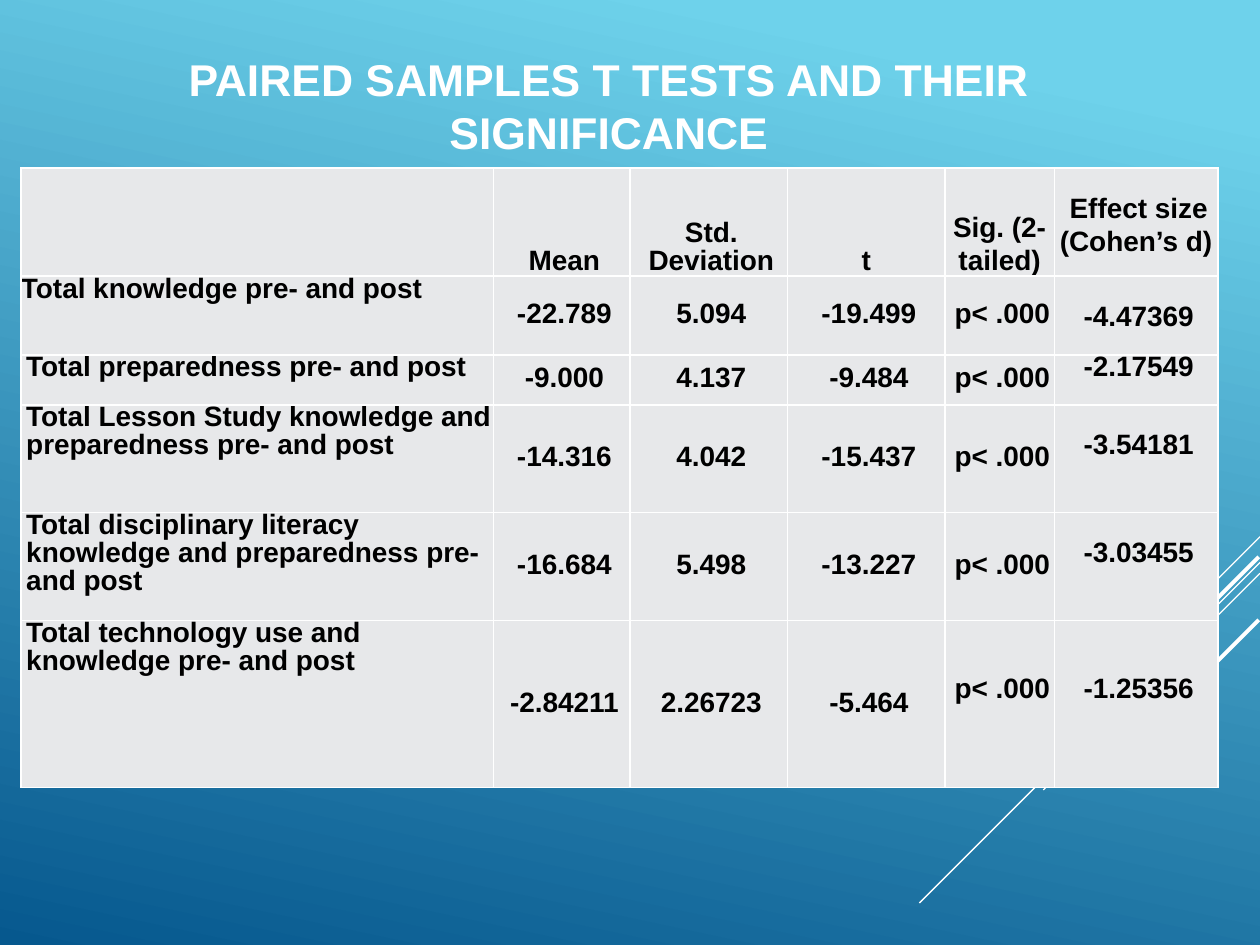
from lxml.etree import SubElement
from pptx import Presentation
from pptx.dml.color import RGBColor as Color
from pptx.enum.shapes import MSO_CONNECTOR as Connector
from pptx.enum.text import MSO_ANCHOR as Anchor, MSO_AUTO_SIZE as AutoSize, PP_ALIGN as Align
from pptx.oxml.ns import qn
from pptx.util import Pt

TITLE = "PAIRED SAMPLES T TESTS AND THEIR SIGNIFICANCE"
HEADER = ["", "Mean", "Std. Deviation", "t", "Sig. (2-tailed)", "Effect size\n(Cohen’s d)"]
RESULTS = [
    ("Total knowledge pre- and post", "-22.789", "5.094", "-19.499", "p< .000", "-4.47369"),
    ("Total preparedness pre- and post", "-9.000", "4.137", "-9.484", "p< .000", "-2.17549"),
    ("Total Lesson Study knowledge and preparedness pre- and post",
     "-14.316", "4.042", "-15.437", "p< .000", "-3.54181"),
    ("Total disciplinary literacy knowledge and preparedness pre- and post",
     "-16.684", "5.498", "-13.227", "p< .000", "-3.03455"),
    ("Total technology use and knowledge pre- and post",
     "-2.84211", "2.26723", "-5.464", "p< .000", "-1.25356"),
]
COLUMN_WIDTHS = [270, 78, 90, 90, 62.5, 93.5]
ROW_HEIGHTS = [61.8, 45, 28.6, 61.6, 61.6, 95.4]
EFFECT_TOP_MARGINS = [16, 16, 0, 16, 16, 32]
TABLE_LEFT, TABLE_TOP = 12, 96
DIAGONALS = [
    (720, 306.7, 60, 0.75),
    (720, 321.4, 194.6, 0.75),
    (720, 327.6, 123.8, 0.75),
    (719.3, 318.2, 113, 2.25),
    (719.3, 354.2, 82, 2.25),
]
THEME = {
    "font": "Arial", "title_size": 25.4, "cell_size": 16, "line": Pt(16),
    "white": "FFFFFF", "ink": "000000", "cell": "E7E8EA",
    "gradient": [(0.1, "6ED2EB"), (1, "06588E")], "angle": 258,
}


def write(frame, text, size, color, align=Align.CENTER, spacings=(None,), indents=(0,)):
    for index, line in enumerate(text.split("\n")):
        para = frame.paragraphs[0] if index == 0 else frame.add_paragraph()
        para.alignment = align
        para.line_spacing = spacings[min(index, len(spacings) - 1)]
        indent = indents[min(index, len(indents) - 1)]
        if indent:
            para._p.get_or_add_pPr().set("marL", str(Pt(indent)))
        span = para.add_run()
        span.text = line
        span.font.name = THEME["font"]
        span.font.size = Pt(size)
        span.font.bold = True
        span.font.color.rgb = Color.from_string(color)


def paint_background(slide):
    fill = slide.background.fill
    fill.gradient()
    fill.gradient_angle = THEME["angle"]
    for stop, (position, color) in zip(fill.gradient_stops, THEME["gradient"]):
        stop.position = position
        stop.color.rgb = Color.from_string(color)


def add_title(slide):
    title = slide.shapes.title
    title.left, title.top, title.width, title.height = Pt(90), Pt(12), Pt(516), Pt(96)
    frame = title.text_frame
    frame.word_wrap = True
    frame.auto_size = AutoSize.NONE
    frame.vertical_anchor = Anchor.MIDDLE
    write(frame, TITLE, THEME["title_size"], THEME["white"])


def add_diagonals(slide):
    for right, top, reach, width in DIAGONALS:
        line = slide.shapes.add_connector(
            Connector.STRAIGHT, Pt(right), Pt(top), Pt(right - reach), Pt(top + reach))
        line.line.color.rgb = Color.from_string(THEME["white"])
        line.line.width = Pt(width)
        SubElement(line._element.spPr, qn("a:effectLst"))


def style_cell(cell):
    cell.margin_left = cell.margin_right = cell.margin_top = cell.margin_bottom = 0
    properties = cell._tc.get_or_add_tcPr()
    for side in ("lnL", "lnR", "lnT", "lnB"):
        border = SubElement(properties, qn(f"a:{side}"), w=str(Pt(1)))
        solid = SubElement(border, qn("a:solidFill"))
        SubElement(solid, qn("a:srgbClr"), val=THEME["white"])
    cell.fill.solid()
    cell.fill.fore_color.rgb = Color.from_string(THEME["cell"])


def fill_cell(cell, text, row, column):
    label, effect = column == 0, column == len(HEADER) - 1
    spacings, indents = (THEME["line"],), (3,)
    if label or effect:
        cell.vertical_anchor = Anchor.TOP
    else:
        cell.vertical_anchor = Anchor.MIDDLE if row else Anchor.BOTTOM
    if effect:
        cell.margin_top = Pt(EFFECT_TOP_MARGINS[row])
    if row == 0 and effect:
        spacings, indents = (THEME["line"], 1.07), (3, 0)
    elif row == 0 and column in (3, 4):
        spacings, indents = (1.07,), (0,)
    elif row == 1 and label:
        indents = (0,)
    elif row == len(RESULTS) and column == 4:
        cell.margin_bottom = THEME["line"]
    if text:
        write(cell.text_frame, text, THEME["cell_size"], THEME["ink"],
              align=Align.LEFT if label else Align.CENTER, spacings=spacings, indents=indents)


def add_results(slide):
    rows = [HEADER, *RESULTS]
    table = slide.shapes.add_table(
        len(rows), len(HEADER), Pt(TABLE_LEFT), Pt(TABLE_TOP),
        Pt(sum(COLUMN_WIDTHS)), Pt(sum(ROW_HEIGHTS))).table
    table.first_row = table.horz_banding = False
    for column, width in zip(table.columns, COLUMN_WIDTHS):
        column.width = Pt(width)
    for row, height in zip(table.rows, ROW_HEIGHTS):
        row.height = Pt(height)
    for row, texts in enumerate(rows):
        for column, text in enumerate(texts):
            cell = table.cell(row, column)
            style_cell(cell)
            fill_cell(cell, text, row, column)


def main():
    deck = Presentation()
    deck.slide_width, deck.slide_height = Pt(720), Pt(540)
    slide = deck.slides.add_slide(deck.slide_layouts[5])
    paint_background(slide)
    add_diagonals(slide)
    add_title(slide)
    add_results(slide)
    deck.save("out.pptx")


if __name__ == "__main__":
    main()
